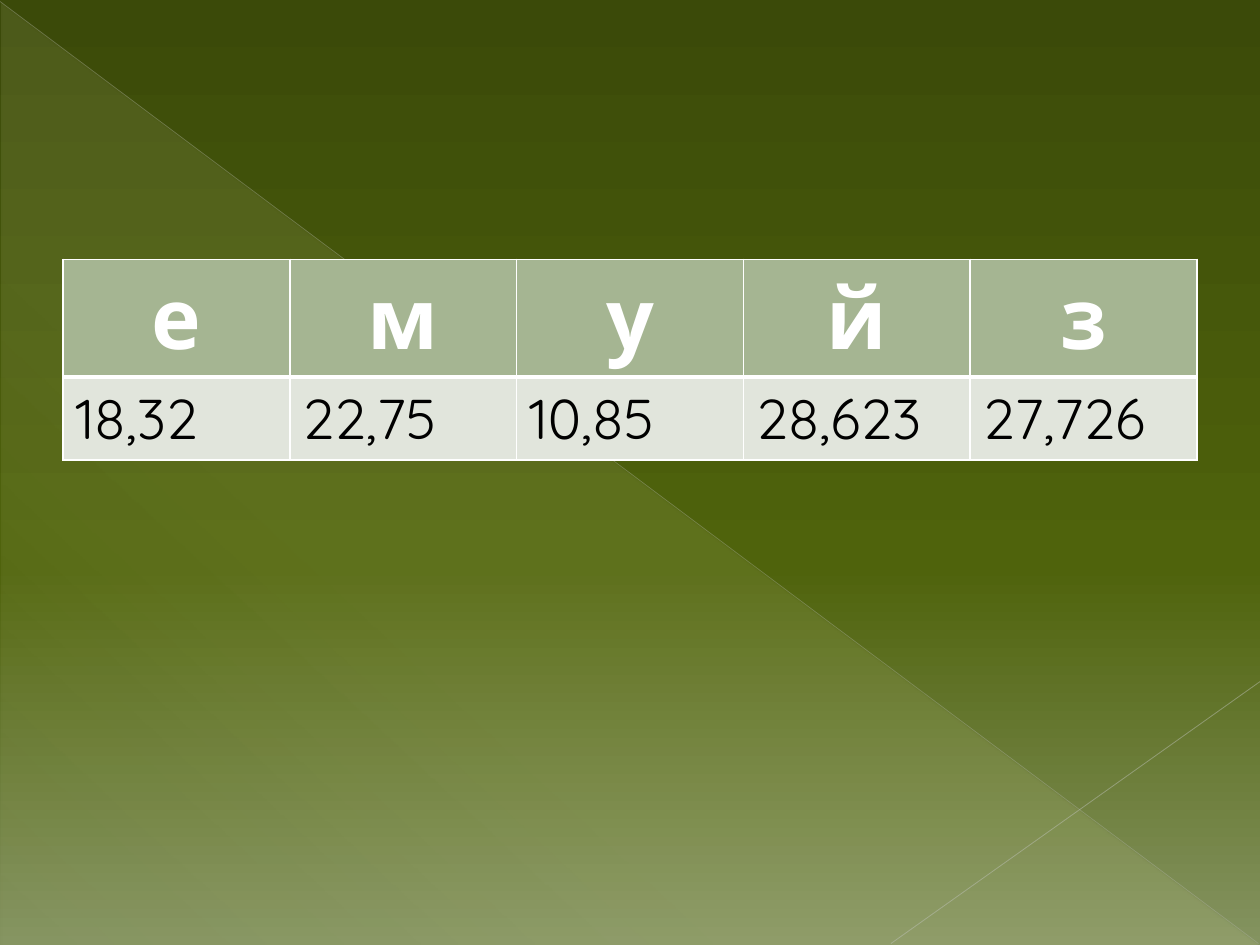
from lxml.etree import SubElement
from pptx import Presentation
from pptx.dml.color import RGBColor
from pptx.enum.shapes import MSO_CONNECTOR, MSO_SHAPE
from pptx.enum.text import PP_ALIGN
from pptx.oxml.ns import qn
from pptx.util import Cm, Pt

COLORS = {
    "dark": "3B4A09", "olive": "4F630C", "sage": "849360",
    "cream": "FEFAC9", "falling": "BABDB3", "rising": "C1C4BC",
    "header": "A5B592", "body": "E1E5DC",
    "white": "FFFFFF", "black": "000000",
}
HEADER = {"fill": "header", "color": "white", "align": PP_ALIGN.CENTER,
          "font": {"name": "Quicksand", "size": Pt(48), "bold": True},
          "borders": {"L": 1, "R": 1, "T": 1, "B": 3}}
BODY = {"fill": "body", "color": "black", "align": PP_ALIGN.LEFT,
        "font": {"name": "Quicksand", "size": Pt(32), "bold": False},
        "borders": {"L": 1, "R": 1, "T": 3, "B": 1}}


class SlideBuilder:
    def __init__(self, prs):
        self.s = prs.slides.add_slide(prs.slide_layouts[6])

    def rgb(self, name):
        return RGBColor.from_string(COLORS[name])

    def gradient(self, fill, element, stops, angle):
        """Fill with (position %, colour, opacity %) stops, angle clockwise."""
        fill.gradient()
        grad = element.find(".//" + qn("a:gradFill"))
        gs_lst = grad.find(qn("a:gsLst"))
        for gs in list(gs_lst):
            gs_lst.remove(gs)
        for pos, color, opacity in stops:
            gs = SubElement(gs_lst, qn("a:gs"), pos=str(pos * 1000))
            clr = SubElement(gs, qn("a:srgbClr"), val=COLORS[color])
            if opacity < 100:
                SubElement(clr, qn("a:alpha"), val=str(opacity * 1000))
        grad.find(qn("a:lin")).set("ang", str(angle * 60000))

    def background(self, stops, angle):
        self.gradient(self.s.background.fill, self.s.element, stops, angle)

    def triangle(self, x, y, w, h, stops, angle):
        sp = self.s.shapes.add_shape(MSO_SHAPE.RIGHT_TRIANGLE,
                                     Cm(x), Cm(y), Cm(w), Cm(h))
        sp.shadow.inherit = False
        sp.line.fill.background()
        self.gradient(sp.fill, sp.element, stops, angle)

    def line(self, x1, y1, x2, y2, color, width, opacity):
        cxn = self.s.shapes.add_connector(MSO_CONNECTOR.STRAIGHT,
                                          Cm(x1), Cm(y1), Cm(x2), Cm(y2))
        cxn.line.color.rgb = self.rgb(color)
        cxn.line.width = Pt(width)
        clr = cxn.element.find(".//" + qn("a:srgbClr"))
        SubElement(clr, qn("a:alpha"), val=str(opacity * 1000))
        SubElement(cxn.element.spPr, qn("a:effectLst"))

    def cell(self, cell, text, style):
        tc_pr = cell._tc.get_or_add_tcPr()
        for side, width in style["borders"].items():
            ln = SubElement(tc_pr, qn("a:ln" + side), w=str(Pt(width)))
            solid = SubElement(ln, qn("a:solidFill"))
            SubElement(solid, qn("a:srgbClr"), val=COLORS["white"])
        cell.fill.solid()
        cell.fill.fore_color.rgb = self.rgb(style["fill"])
        p = cell.text_frame.paragraphs[0]
        p.alignment = style["align"]
        r = p.add_run()
        r.text = text
        for name, value in style["font"].items():
            setattr(r.font, name, value)
        r.font.color.rgb = self.rgb(style["color"])

    def table(self, x, y, w, rows):
        """Add a table of (height, style, texts) rows with equal columns."""
        n_cols = len(rows[0][2])
        height = sum(row[0] for row in rows)
        table = self.s.shapes.add_table(len(rows), n_cols, Cm(x), Cm(y),
                                        Cm(w), Cm(height)).table
        for i, (row_height, style, texts) in enumerate(rows):
            table.rows[i].height = Cm(row_height)
            for j, text in enumerate(texts):
                self.cell(table.cell(i, j), text, style)


def main():
    prs = Presentation()
    prs.slide_width, prs.slide_height = Cm(25.4), Cm(19.05)
    slide = SlideBuilder(prs)
    slide.background([(0, "dark", 100), (60, "olive", 100),
                      (100, "sage", 100)], 90)
    slide.triangle(0.03, 0.05, 25.35, 19, [(0, "cream", 10), (70, "cream", 8),
                                           (100, "cream", 1)], 133)
    slide.line(0, 0.03, 25.37, 19.02, "falling", 0.39, 35)
    slide.line(25.4, 13.74, 17.96, 19.02, "rising", 0.47, 45)
    slide.table(1.27, 5.23, 22.86, [
        (2.3, HEADER, ["е", "м", "у", "й", "з"]),
        (1.59, BODY, ["18,32", "22,75", "10,85", "28,623", "27,726"]),
    ])
    prs.save("out.pptx")


if __name__ == "__main__":
    main()
